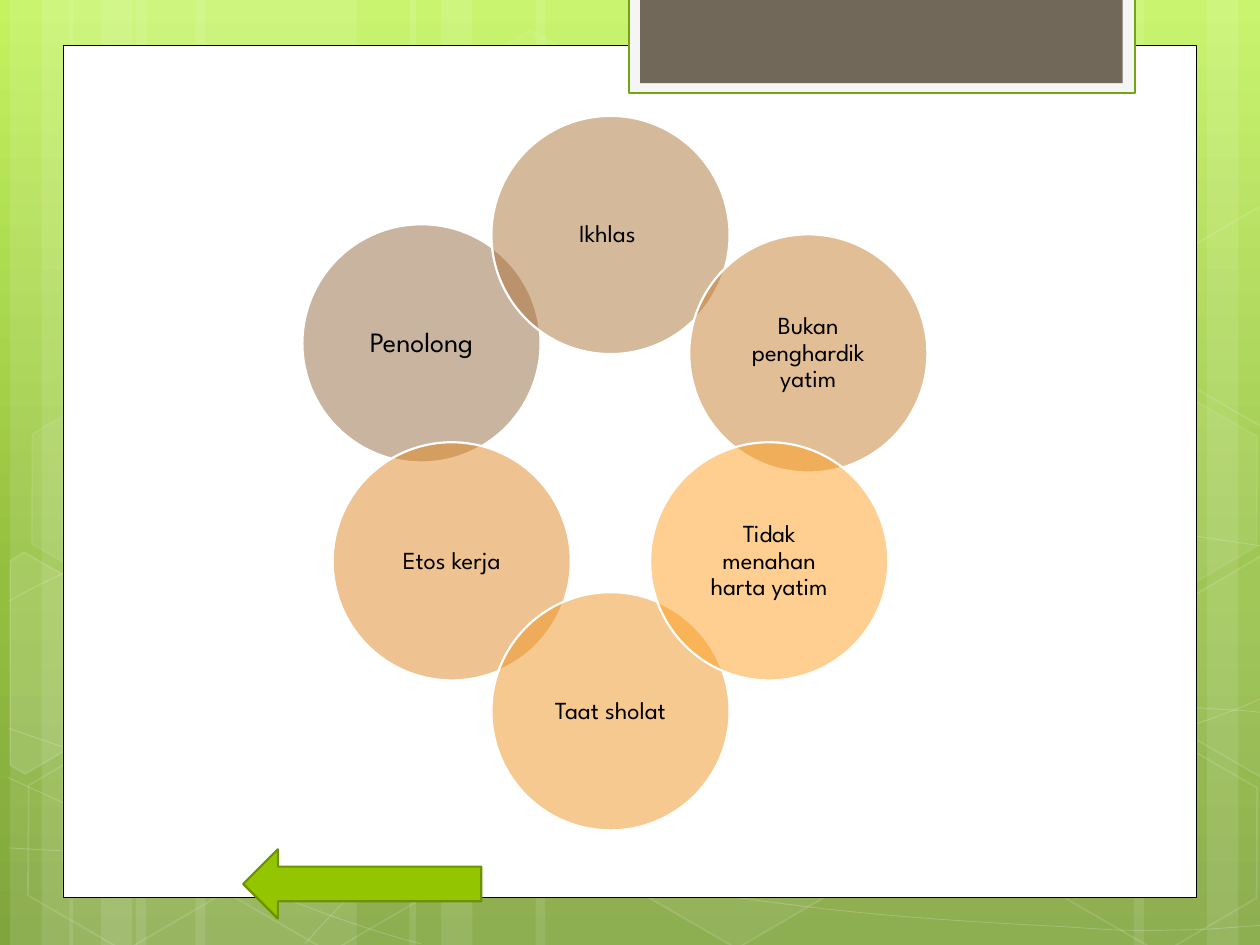
"""Build a slide with a ring of six overlapping circles on a green patterned backdrop."""
from copy import deepcopy
from dataclasses import dataclass
from math import cos, radians, sin
from typing import NamedTuple, Optional

from pptx import Presentation
from pptx.dml.color import RGBColor as Rgb
from pptx.enum.shapes import MSO_SHAPE as Preset
from pptx.enum.text import MSO_ANCHOR as Anchor, PP_ALIGN as Align
from pptx.oxml.ns import qn
from pptx.oxml.xmlchemy import OxmlElement
from pptx.util import Emu, Inches, Pt

COLUMNS, ROWS = 10, 7.5
WIDTH, HEIGHT = Inches(10), Inches(7.5)
COLUMN = WIDTH / COLUMNS
TILT = 30


@dataclass(frozen=True)
class Theme:
    """Colours, font and sizes of the slide."""
    backdrop: tuple = ((0, "C3F35F"), (0.62, "93BF3F"), (1, "81A53E"))
    white: str = "FFFFFF"
    black: str = "000000"
    tab: str = "F5F5F5"
    tab_edge: str = "74A510"
    tab_core: str = "71685A"
    arrow: str = "94C600"
    arrow_edge: str = "6D9200"
    font: str = "League Spartan"
    text_size: float = 14
    large_size: float = 16
    thin: float = 0.5
    medium: float = 1
    thick: float = 1.25


THEME = Theme()


class Box(NamedTuple):
    """Left, top, width and height in grid columns and rows."""
    left: float
    top: float
    width: float
    height: float


class Paint(NamedTuple):
    """A colour with its opacity in percent and, for a line, its width."""
    colour: str
    opacity: int = 100
    width: float = 0


class Band(NamedTuple):
    """A vertical stripe of the backdrop."""
    left: float
    width: float


class Hexagon(NamedTuple):
    """A tilted hexagon of the backdrop; zero fill opacity means outline only."""
    left: float
    top: float
    fill_opacity: int
    line_opacity: int


class CutHexagon(NamedTuple):
    """A tilted hexagon cut off by the slide's edge."""
    centre: tuple
    points: tuple
    fill_opacity: int


class Value(NamedTuple):
    """One circle of the ring."""
    label: str
    left: float
    top: float
    colour: str
    size: float = THEME.text_size


BANDS = [Band(*band) for band in (
    (1.08, 1.75), (0.08, 0.5), (0.33, 0.83), (1.55, 1.75), (0.55, 0.5), (0.8, 0.83),
    (7.33, 1.75), (9.58, 0.5), (9, 0.83), (4.25, 3.08), (3.25, 0.5), (3.5, 0.83))]

CURVES = (
    ((0.07, 6.73), (0.61, 6.76), (1.15, 6.79), (1.9, 6.78), (2.65, 6.77), (3.58, 6.75), (4.58, 6.65),
     (5.58, 6.55), (7, 6.36), (7.92, 6.17), (8.83, 5.98), (9.77, 5.68), (10.07, 5.51)),
    ((0.07, 4.77), (0.36, 4.61), (0.65, 4.46), (1.21, 4.31), (1.78, 4.16), (2.59, 3.94), (3.47, 3.87),
     (4.36, 3.8), (5.44, 3.79), (6.54, 3.87), (7.64, 3.95), (9.47, 4.26), (10.07, 4.34)),
    ((0.06, 6.17), (1.27, 6.72), (2.47, 7.27), (3.34, 7.49)),
    ((0.07, 5.78), (0.38, 5.89), (0.7, 6), (1.28, 6.16), (1.86, 6.31), (2.73, 6.56), (3.57, 6.73),
     (4.4, 6.9), (5.45, 7.08), (6.28, 7.18), (7.11, 7.29), (8, 7.33), (8.53, 7.36),
     (9.05, 7.4), (9.19, 7.38), (9.45, 7.38), (9.71, 7.37), (9.89, 7.35), (10.07, 7.34)),
    ((2.42, 7.49), (2.6, 7.29), (2.78, 7.09), (3.02, 6.91), (3.26, 6.73), (3.6, 6.53), (3.88, 6.39),
     (4.16, 6.25), (4.33, 6.19), (4.7, 6.09), (5.06, 5.99), (5.73, 5.85), (6.08, 5.78),
     (6.44, 5.71), (6.49, 5.71), (6.8, 5.69), (7.11, 5.66), (7.6, 5.63), (7.94, 5.62),
     (8.29, 5.61), (8.86, 5.62), (8.86, 5.62), (9.08, 5.62), (9.31, 5.62), (9.53, 5.62),
     (9.71, 5.63), (9.88, 5.64), (9.97, 5.65), (10.06, 5.66), (10.03, 5.65), (10.06, 5.66)),
)

HEXAGONS = [Hexagon(*hexagon) for hexagon in (
    (3.34, 0.36, 4, 8), (4.97, 5.89, 6, 12), (0.11, 5.91, 0, 12), (0.14, 3.12, 7, 8), (1.74, 5.92, 0, 12),
    (7.53, 4.53, 10, 12), (8.34, 5.93, 0, 12), (8.34, 3.14, 7, 8))]

CUT_HEXAGONS = [CutHexagon(*cut) for cut in (
    ((0.36, 5.35), ((0.08, 4.45), (0.19, 4.38), (0.96, 4.82), (0.95, 5.7), (0.2, 6.14), (0.08, 6.07)), 10),
    ((9.85, 5.2), ((9.26, 4.85), (10.01, 4.41), (10.09, 4.46), (10.09, 6.13), (10.02, 6.17), (9.26, 5.73)), 4),
    ((9.85, 2.41), ((9.26, 2.07), (10.01, 1.63), (10.1, 1.68), (10.09, 3.35), (10.02, 3.39), (9.26, 2.95)), 0))]

VALUES = [
    Value("Penolong", 2.4, 1.78, "956B43", THEME.large_size),
    Value("Ikhlas ", 3.9, 0.92, "AD7439"),
    Value("Bukan penghardik yatim", 5.47, 1.86, "C77E2E"),
    Value("Etos kerja", 2.64, 3.51, "DF8924"),
    Value("Taat sholat", 3.9, 4.7, "EF9422"),
    Value("Tidak menahan harta yatim", 5.16, 3.51, "FEA022"),
]
CIRCLE = 1.89


def set_opacity(shape, route: str, opacity: int) -> None:
    """Add transparency to the colour found along the route."""
    if opacity < 100:
        alpha = OxmlElement("a:alpha")
        alpha.set("val", str(opacity * 1000))
        shape._element.spPr.find("/".join(map(qn, route.split()))).append(alpha)


def dress(shape, fill: Optional[Paint], line: Optional[Paint]) -> None:
    """Set fill and line and drop the shadow."""
    shape.shadow.inherit = False
    if fill and fill.opacity:
        shape.fill.solid()
        shape.fill.fore_color.rgb = Rgb.from_string(fill.colour)
        set_opacity(shape, "a:solidFill a:srgbClr", fill.opacity)
    else:
        shape.fill.background()
    if line:
        shape.line.color.rgb = Rgb.from_string(line.colour)
        shape.line.width = Pt(line.width)
        set_opacity(shape, "a:ln a:solidFill a:srgbClr", line.opacity)
    else:
        shape.line.fill.background()


def draw_preset(slide, preset, box: Box, fill: Optional[Paint] = None, line: Optional[Paint] = None,
                rotation: float = 0):
    """Draw a preset shape on the grid."""
    shape = slide.shapes.add_shape(preset, *(Emu(round(length * COLUMN)) for length in box))
    shape.rotation = rotation
    dress(shape, fill, line)
    return shape


def draw_outline(slide, points, closed: bool, fill: Optional[Paint], line: Paint):
    """Draw a freeform through grid points."""
    start, *others = [(round(x * COLUMN), round(y * COLUMN)) for x, y in points]
    builder = slide.shapes.build_freeform(*start)
    builder.add_line_segments(others, close=closed)
    shape = builder.convert_to_shape()
    dress(shape, fill, line)
    return shape


def bend(shape) -> None:
    """Turn each three straight segments into one cubic Bezier segment."""
    steps = list(shape._element.iter(qn("a:lnTo")))
    for first in range(0, len(steps), 3):
        curve = OxmlElement("a:cubicBezTo")
        steps[first].addprevious(curve)
        for step in steps[first:first + 3]:
            curve.append(step[0])
            step.getparent().remove(step)


def untilt(point, centre) -> tuple:
    """Turn a point back by the tilt about the centre."""
    across, down = point[0] - centre[0], point[1] - centre[1]
    cosine, sine = cos(radians(TILT)), sin(radians(TILT))
    return centre[0] + cosine * across + sine * down, centre[1] - sine * across + cosine * down


def paint_background(slide) -> None:
    """Fill the background with the three-stop gradient."""
    fill = slide.background.fill
    fill.gradient()
    fill.gradient_angle = 270
    stops = slide._element.find(".//" + qn("a:gsLst"))
    stops.insert(1, deepcopy(stops[0]))
    for stop, (position, colour) in zip(fill.gradient_stops, THEME.backdrop):
        stop.position = position
        stop.color.rgb = Rgb.from_string(colour)


def draw_backdrop(slide) -> None:
    """Draw the stripes, curves and hexagons."""
    for band in BANDS:
        draw_preset(slide, Preset.RECTANGLE, Box(band.left, 0, band.width, ROWS), Paint(THEME.white, 10))
    for curve in CURVES:
        bend(draw_outline(slide, curve, False, None, Paint(THEME.white, 20, THEME.thin)))
    for left, top, fill_opacity, line_opacity in HEXAGONS:
        hexagon = draw_preset(slide, Preset.HEXAGON, Box(left, top, 1.75, 1.52), Paint(THEME.white, fill_opacity),
                              Paint(THEME.white, line_opacity, THEME.medium), TILT)
        hexagon.adjustments[0] = 0.285
    for centre, points, fill_opacity in CUT_HEXAGONS:
        upright = [untilt(point, centre) for point in points]
        cut = draw_outline(slide, upright, True, Paint(THEME.white, fill_opacity),
                           Paint(THEME.white, 12, THEME.medium))
        cut.rotation = TILT


def draw_frame(slide) -> None:
    """Draw the white panel and the tab at its top."""
    panel, tab, core = Box(0.5, 0.36, 9, 6.76), Box(4.99, -0.02, 4.02, 0.76), Box(5.08, -0.02, 3.83, 0.68)
    draw_preset(slide, Preset.RECTANGLE, panel, Paint(THEME.white), Paint(THEME.black, width=THEME.thin))
    draw_preset(slide, Preset.RECTANGLE, tab, Paint(THEME.tab), Paint(THEME.tab_edge, width=THEME.thick))
    draw_preset(slide, Preset.RECTANGLE, core, Paint(THEME.tab_core))


def draw_value(slide, value: Value) -> None:
    """Draw one labelled circle."""
    circle = draw_preset(slide, Preset.OVAL, Box(value.left, value.top, CIRCLE, CIRCLE),
                         Paint(value.colour, 50), Paint(THEME.white, width=THEME.thick))
    frame = circle.text_frame
    frame.text = value.label
    frame.word_wrap = True
    frame.vertical_anchor = Anchor.MIDDLE
    frame.margin_left = frame.margin_right = Inches(0.1)
    frame.margin_top = frame.margin_bottom = Inches(0.02)
    paragraph = frame.paragraphs[0]
    paragraph.alignment, paragraph.line_spacing = Align.CENTER, 0.9
    font = paragraph.runs[0].font
    font.name, font.size, font.color.rgb = THEME.font, Pt(value.size), Rgb.from_string(THEME.black)


def main() -> None:
    """Build and save the slide."""
    deck = Presentation()
    deck.slide_width, deck.slide_height = WIDTH, HEIGHT
    slide = deck.slides.add_slide(deck.slide_layouts[6])
    paint_background(slide)
    draw_backdrop(slide)
    draw_frame(slide)
    for value in VALUES:
        draw_value(slide, value)
    draw_preset(slide, Preset.RIGHT_ARROW, Box(1.93, 6.74, 1.89, 0.55), Paint(THEME.arrow),
                Paint(THEME.arrow_edge, width=THEME.thick), 180)
    deck.save("out.pptx")


if __name__ == "__main__":
    main()
